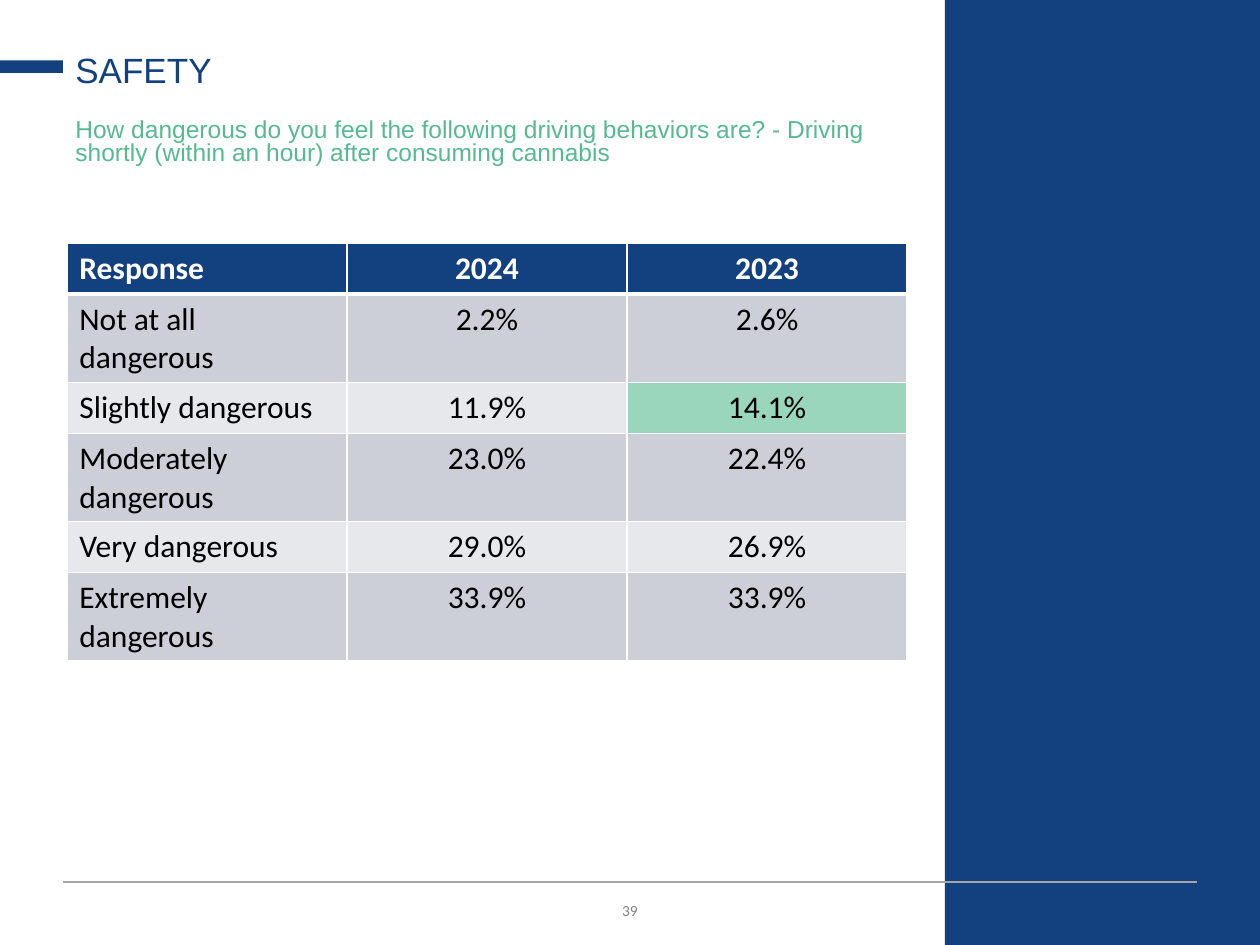
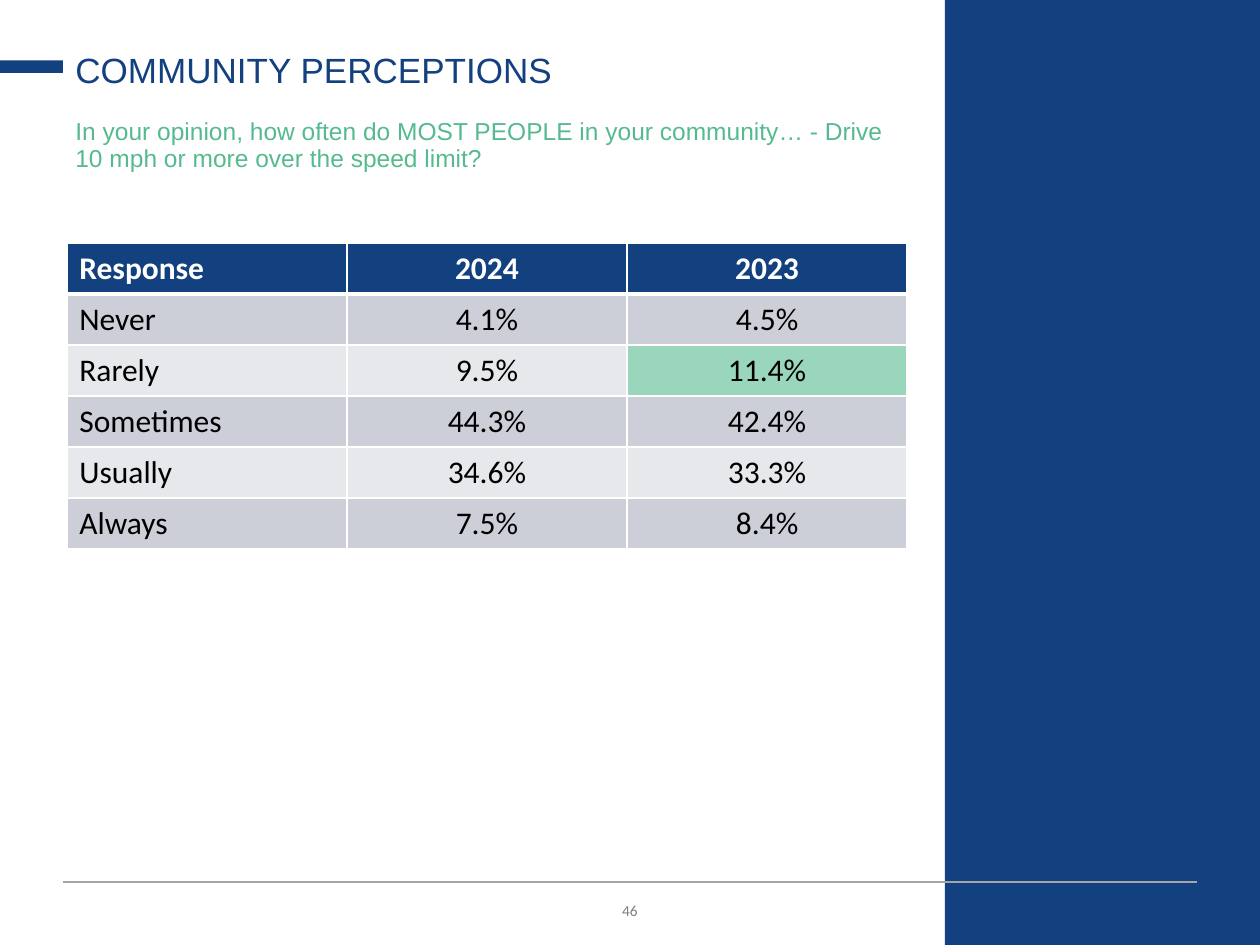
import pptx
import pptx.util
import pptx.dml.color
import pptx.enum.shapes
import pptx.enum.text
import pptx.oxml.ns
import lxml.etree

Inches, Pt = pptx.util.Inches, pptx.util.Pt
ALIGN = pptx.enum.text.PP_ALIGN
ANCHOR = pptx.enum.text.MSO_ANCHOR

# Content
PAGES = [
    {"number": "39", "title": "SAFETY", "spacing": 0.8,
     "question": "How dangerous do you feel the following driving behaviors are? - "
                 "Driving shortly (within an hour) after consuming cannabis",
     "answers": [("Not at all dangerous", "2.2%", "2.6%"),
                 ("Slightly dangerous", "11.9%", "14.1%"),
                 ("Moderately dangerous", "23.0%", "22.4%"),
                 ("Very dangerous", "29.0%", "26.9%"),
                 ("Extremely dangerous", "33.9%", "33.9%")]},
    {"number": "46", "title": "COMMUNITY PERCEPTIONS", "spacing": 0.9,
     "question": "In your opinion, how often do MOST PEOPLE in your community… - "
                 "Drive 10 mph or more over the speed limit?",
     "answers": [("Never", "4.1%", "4.5%"),
                 ("Rarely", "9.5%", "11.4%"),
                 ("Sometimes", "44.3%", "42.4%"),
                 ("Usually", "34.6%", "33.3%"),
                 ("Always", "7.5%", "8.4%")]},
]
HEADER = ("Response", "2024", "2023")
HIGHLIGHT = (2, 2)  # row and column of the marked cell

# Shared look
NAVY, GREEN, MINT = "13407E", "55BA8F", "99D6BC"
WHITE, BLACK, GRAY, RULE = "FFFFFF", "000000", "808080", "A6A6A6"
BANDS = ("E7E8EC", "CCCFD8")  # even rows, odd rows
TABLE = (0.53, 1.93, 6.67, 2.43)


def color(code):
    return pptx.dml.color.RGBColor.from_string(code)


def write(frame, text, size=18, font="Calibri", ink=BLACK, bold=False,
          align=ALIGN.LEFT, spacing=None, small_caps=False):
    para = frame.paragraphs[0]
    para.alignment = align
    para.line_spacing = spacing
    span = para.add_run()
    span.text = text
    span.font.size, span.font.name, span.font.bold = Pt(size), font, bold
    span.font.color.rgb = color(ink)
    if small_caps:
        span.font._element.set("cap", "small")


def add_text(page, place, text, anchor=ANCHOR.TOP, **style):
    box = page.shapes.add_textbox(*map(Inches, place))
    box.text_frame.word_wrap = True
    box.text_frame.vertical_anchor = anchor
    write(box.text_frame, text, **style)


def add_band(page, *place):
    band = page.shapes.add_shape(pptx.enum.shapes.MSO_SHAPE.RECTANGLE, *map(Inches, place))
    band.shadow.inherit = False
    band.fill.solid()
    band.fill.fore_color.rgb = color(NAVY)
    band.line.fill.background()


def add_rule(page, left, right, top):
    rule = page.shapes.add_connector(pptx.enum.shapes.MSO_CONNECTOR.STRAIGHT,
                                     Inches(left), Inches(top), Inches(right), Inches(top))
    rule.line.color.rgb = color(RULE)
    rule.line.width = Pt(0.75)
    lxml.etree.SubElement(rule._element.spPr, pptx.oxml.ns.qn("a:effectLst"))


def set_borders(cell, row):
    # The line under the header row is the thick one
    widths = {"L": 1, "R": 1, "T": 3 if row == 1 else 1, "B": 3 if row == 0 else 1}
    properties = cell._tc.get_or_add_tcPr()
    for side, width in widths.items():
        border = lxml.etree.SubElement(properties, pptx.oxml.ns.qn(f"a:ln{side}"), w=str(Pt(width)))
        fill = lxml.etree.SubElement(border, pptx.oxml.ns.qn("a:solidFill"))
        lxml.etree.SubElement(fill, pptx.oxml.ns.qn("a:srgbClr"), val=WHITE)


def add_answers(page, answers):
    rows = [HEADER, *answers]
    left, top, width, height = map(Inches, TABLE)
    table = page.shapes.add_table(len(rows), len(HEADER), left, top, width, height).table
    for row, values in enumerate(rows):
        for column, value in enumerate(values):
            cell = table.cell(row, column)
            set_borders(cell, row)
            shade = NAVY if row == 0 else MINT if (row, column) == HIGHLIGHT else BANDS[row % 2]
            cell.fill.solid()
            cell.fill.fore_color.rgb = color(shade)
            write(cell.text_frame, value, bold=row == 0, ink=BLACK if row else WHITE,
                  align=ALIGN.CENTER if column else ALIGN.LEFT)


def add_page(deck, content):
    page = deck.slides.add_slide(deck.slide_layouts[6])
    # Footer, side band and title mark
    add_text(page, (0.5, 7.06, 9, 0.3), content["number"], anchor=ANCHOR.MIDDLE,
             size=11, ink=GRAY, align=ALIGN.CENTER, small_caps=True)
    add_band(page, 7.5, 0, 2.5, 7.5)
    add_rule(page, 0.5, 9.5, 7)
    add_band(page, 0, 0.48, 0.5, 0.1)
    # Question, title and answers
    add_text(page, (0.5, 0.9, 6.7, 0.67), content["question"],
             size=14, font="Arial", ink=GREEN, spacing=content["spacing"])
    add_text(page, (0.5, 0.29, 6.7, 0.48), content["title"], anchor=ANCHOR.BOTTOM,
             size=20, font="Arial", ink=NAVY, spacing=0.9)
    add_answers(page, content["answers"])


def main():
    deck = pptx.Presentation()
    deck.slide_width, deck.slide_height = Inches(10), Inches(7.5)
    for content in PAGES:
        add_page(deck, content)
    deck.save("out.pptx")


if __name__ == "__main__":
    main()
